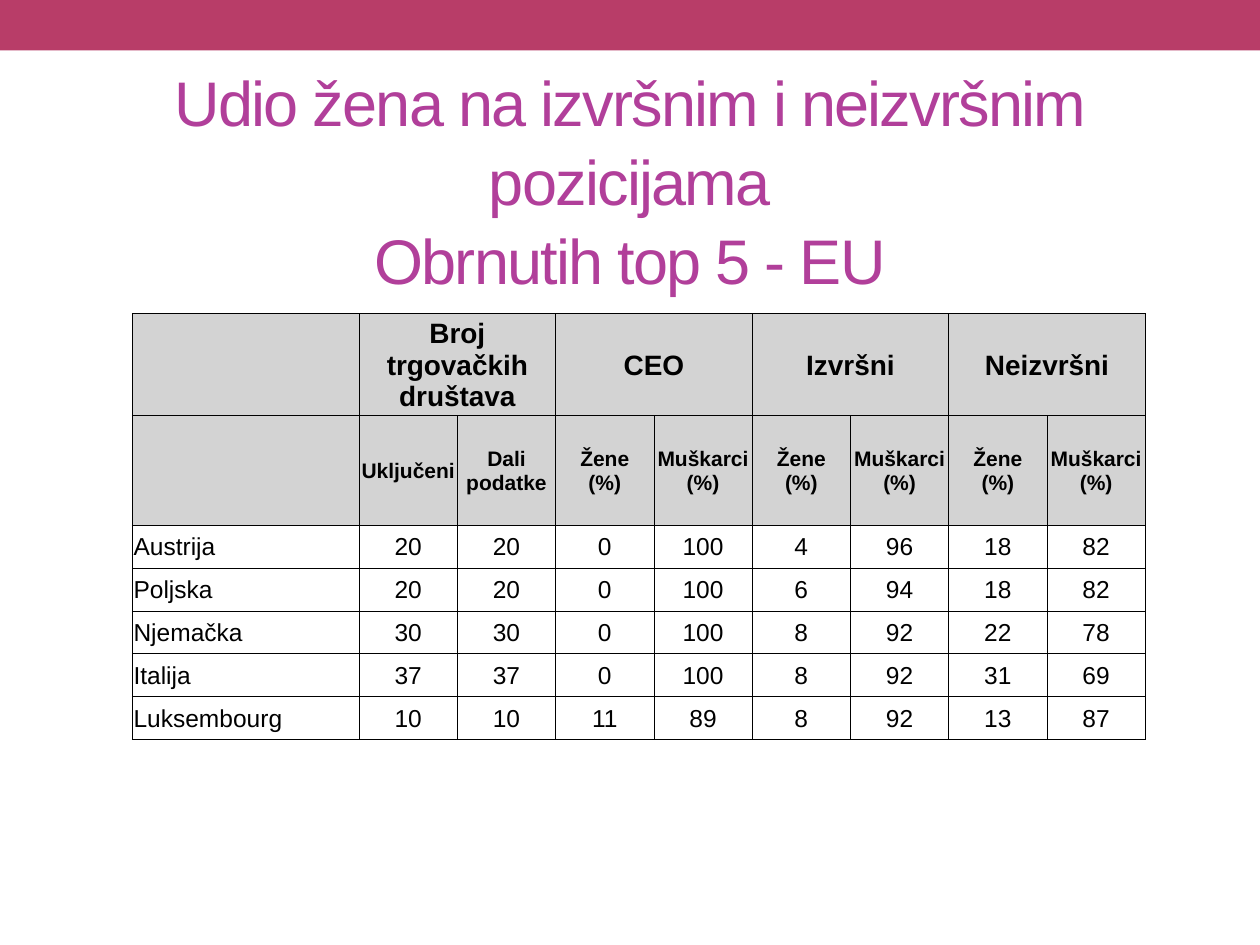
from dataclasses import dataclass

from lxml import etree
from pptx import Presentation
from pptx.dml.color import RGBColor
from pptx.enum.shapes import MSO_SHAPE
from pptx.enum.text import MSO_ANCHOR, PP_ALIGN
from pptx.oxml.ns import qn
from pptx.util import Inches, Pt

RECT = MSO_SHAPE.RECTANGLE
MIDDLE = MSO_ANCHOR.MIDDLE
LEFT, CENTER = PP_ALIGN.LEFT, PP_ALIGN.CENTER


@dataclass(frozen=True)
class Theme:
    font: str = "Arial"
    band: str = "B83D68"
    title: str = "B13F9A"
    text: str = "000000"
    header: str = "D3D3D3"
    border: str = "000000"
    title_size: int = 36
    group_size: int = 16
    column_size: int = 12
    body_size: int = 14
    border_width: float = 0.5


THEME = Theme()
TITLE = "Udio žena na izvršnim i neizvršnim pozicijama\vObrnutih top 5 - EU"
GROUPS = ["Broj trgovačkih društava", "CEO", "Izvršni", "Neizvršni"]
COLUMNS = ["Uključeni", "Dali podatke"] + ["Žene\v(%)", "Muškarci\v(%)"] * 3
COUNTRIES = [
    ("Austrija", 20, 20, 0, 100, 4, 96, 18, 82),
    ("Poljska", 20, 20, 0, 100, 6, 94, 18, 82),
    ("Njemačka", 30, 30, 0, 100, 8, 92, 22, 78),
    ("Italija", 37, 37, 0, 100, 8, 92, 31, 69),
    ("Luksembourg", 10, 10, 11, 89, 8, 92, 13, 87),
]


def write(tf, text, size, color=THEME.text, bold=False, align=CENTER,
          tracking=None, line_spacing=None):
    tf.word_wrap = True
    p = tf.paragraphs[0]
    p.text = text
    p.alignment = align
    if line_spacing:
        p.line_spacing = line_spacing
    for r in p.runs:
        r.font.name = THEME.font
        r.font.size = Pt(size)
        r.font.bold = bold
        r.font.color.rgb = RGBColor.from_string(color)
        if tracking:
            r.font._element.set("spc", str(int(tracking * 100)))


def add_band(slide, x, y, w, h):
    s = slide.shapes.add_shape(RECT, x, y, w, h)
    s.shadow.inherit = False
    s.fill.solid()
    s.fill.fore_color.rgb = RGBColor.from_string(THEME.band)
    s.line.fill.background()


def add_title(slide, x, y, w, h):
    tf = slide.shapes.add_textbox(x, y, w, h).text_frame
    tf.margin_top = tf.margin_bottom = 0
    tf.vertical_anchor = MIDDLE
    write(tf, TITLE, THEME.title_size, color=THEME.title, tracking=-1,
          line_spacing=1.04)


def style_cell(cell, fill=None):
    cell.vertical_anchor = MIDDLE
    cell.margin_left = cell.margin_right = cell.margin_top = Inches(0.01)
    cell.margin_bottom = 0
    tc_pr = cell._tc.get_or_add_tcPr()
    for side in ("a:lnL", "a:lnR", "a:lnT", "a:lnB"):
        ln = etree.SubElement(tc_pr, qn(side), w=str(Pt(THEME.border_width)))
        line_fill = etree.SubElement(ln, qn("a:solidFill"))
        etree.SubElement(line_fill, qn("a:srgbClr"), val=THEME.border)
    if fill:
        cell.fill.solid()
        cell.fill.fore_color.rgb = RGBColor.from_string(fill)
    else:
        cell.fill.background()


def add_share_table(slide, x, y, w, h):
    n_rows, n_cols = len(COUNTRIES) + 2, len(COLUMNS) + 1
    table = slide.shapes.add_table(n_rows, n_cols, x, y, w, h).table
    table.first_row = table.horz_banding = False

    name_w = Inches(1.8)
    for i, col in enumerate(table.columns):
        col.width = name_w if i == 0 else (w - name_w) // len(COLUMNS)
    head_h = [Inches(0.79), Inches(0.87)]
    for i, row in enumerate(table.rows):
        row.height = head_h[i] if i < 2 else (h - sum(head_h)) // len(COUNTRIES)
        for cell in row.cells:
            style_cell(cell, THEME.header if i < 2 else None)

    for i, text in enumerate(GROUPS):
        cell = table.cell(0, 2 * i + 1)
        cell.merge(table.cell(0, 2 * i + 2))
        write(cell.text_frame, text, THEME.group_size, bold=True)
    for i, text in enumerate(COLUMNS, 1):
        write(table.cell(1, i).text_frame, text, THEME.column_size, bold=True)
    for i, values in enumerate(COUNTRIES, 2):
        for j, value in enumerate(values):
            write(table.cell(i, j).text_frame, str(value), THEME.body_size,
                  align=CENTER if j else LEFT)


def main():
    prs = Presentation()
    prs.slide_width, prs.slide_height = Inches(10), Inches(7.5)
    slide = prs.slides.add_slide(prs.slide_layouts[6])
    add_band(slide, 0, 0, prs.slide_width, Inches(0.4))
    add_title(slide, Inches(0.5), Inches(0.52), Inches(9), Inches(1.8))
    add_share_table(slide, Inches(1.05), Inches(2.49), Inches(8.04), Inches(3.36))
    prs.save("out.pptx")


if __name__ == "__main__":
    main()
